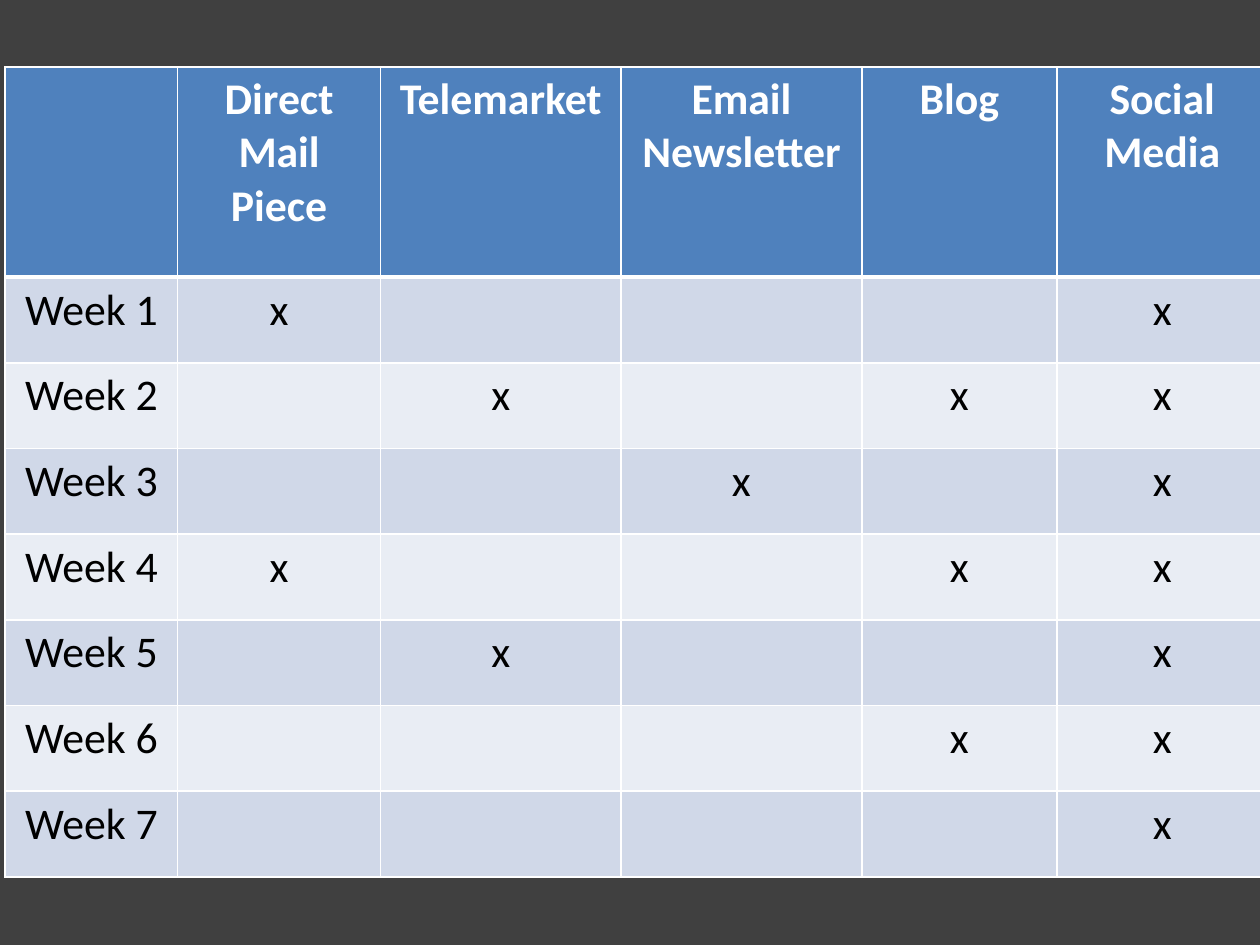
from dataclasses import dataclass

from lxml.etree import SubElement
from pptx import Presentation
from pptx.dml.color import RGBColor as RGB
from pptx.enum.text import PP_ALIGN as Align
from pptx.oxml.ns import qn
from pptx.util import Inches, Pt


@dataclass(frozen=True)
class Theme:
    font: str = "Calibri"
    size: float = 25
    background: str = "404040"
    header: str = "4F81BD"
    bands: tuple = ("D0D8E8", "E9EDF4")
    light: str = "FFFFFF"
    dark: str = "000000"
    rule: float = 1
    header_rule: float = 3


def write(tf, text, *, font, size, color, bold=False, align=Align.CENTER):
    p = tf.paragraphs[0]
    p.alignment = align
    r = p.add_run()
    r.text = text
    r.font.name, r.font.size, r.font.bold = font, Pt(size), bold
    r.font.color.rgb = RGB.from_string(color)


class Deck:
    """Build slides that share one theme."""

    def __init__(self, prs, theme):
        self.theme = theme
        self.s = prs.slides.add_slide(prs.slide_layouts[6])
        fill = self.s.background.fill
        fill.solid()
        fill.fore_color.rgb = RGB.from_string(theme.background)

    def borders(self, cell, top, bottom):
        t = self.theme
        props = cell._tc.get_or_add_tcPr()
        widths = {"a:lnL": t.rule, "a:lnR": t.rule, "a:lnT": top, "a:lnB": bottom}
        for i, (tag, width) in enumerate(widths.items()):
            line = SubElement(props, qn(tag), w=str(Pt(width)))
            fill = SubElement(line, qn("a:solidFill"))
            SubElement(fill, qn("a:srgbClr"), val=t.light)
            props.insert(i, line)

    def cell(self, cell, text, row):
        t = self.theme
        header = row == 0
        cell.fill.solid()
        cell.fill.fore_color.rgb = RGB.from_string(
            t.header if header else t.bands[(row - 1) % 2])
        self.borders(cell, t.header_rule if row == 1 else t.rule,
                     t.header_rule if header else t.rule)
        if text:
            write(cell.text_frame, text, font=t.font, size=t.size,
                  color=t.light if header else t.dark, bold=header)

    def table(self, rows, left, top, widths, heights):
        tbl = self.s.shapes.add_table(
            len(rows), len(widths), Inches(left), Inches(top),
            Inches(sum(widths)), Inches(sum(heights))).table
        for col, width in zip(tbl.columns, widths):
            col.width = Inches(width)
        for i, (values, height) in enumerate(zip(rows, heights)):
            tbl.rows[i].height = Inches(height)
            for j, text in enumerate(values):
                self.cell(tbl.cell(i, j), text, i)


def main():
    prs = Presentation()
    prs.slide_width, prs.slide_height = Inches(10), Inches(7.5)
    channels = ["Direct Mail Piece", "Telemarket", "Email Newsletter",
                "Blog", "Social Media"]
    schedule = [
        {"Direct Mail Piece"},
        {"Telemarket", "Blog"},
        {"Email Newsletter"},
        {"Direct Mail Piece", "Blog"},
        {"Telemarket"},
        {"Blog"},
        set(),
    ]
    rows = [["", *channels]]
    for week, used in enumerate(schedule, 1):
        active = used | {"Social Media"}
        rows.append([f"Week {week}", *("x" if c in active else "" for c in channels)])
    deck = Deck(prs, Theme())
    deck.table(rows, left=0.04, top=0.53,
               widths=[1.37, 1.61, 1.91, 1.91, 1.55, 1.67],
               heights=[1.67] + [0.68] * len(schedule))
    prs.save("out.pptx")


if __name__ == "__main__":
    main()
